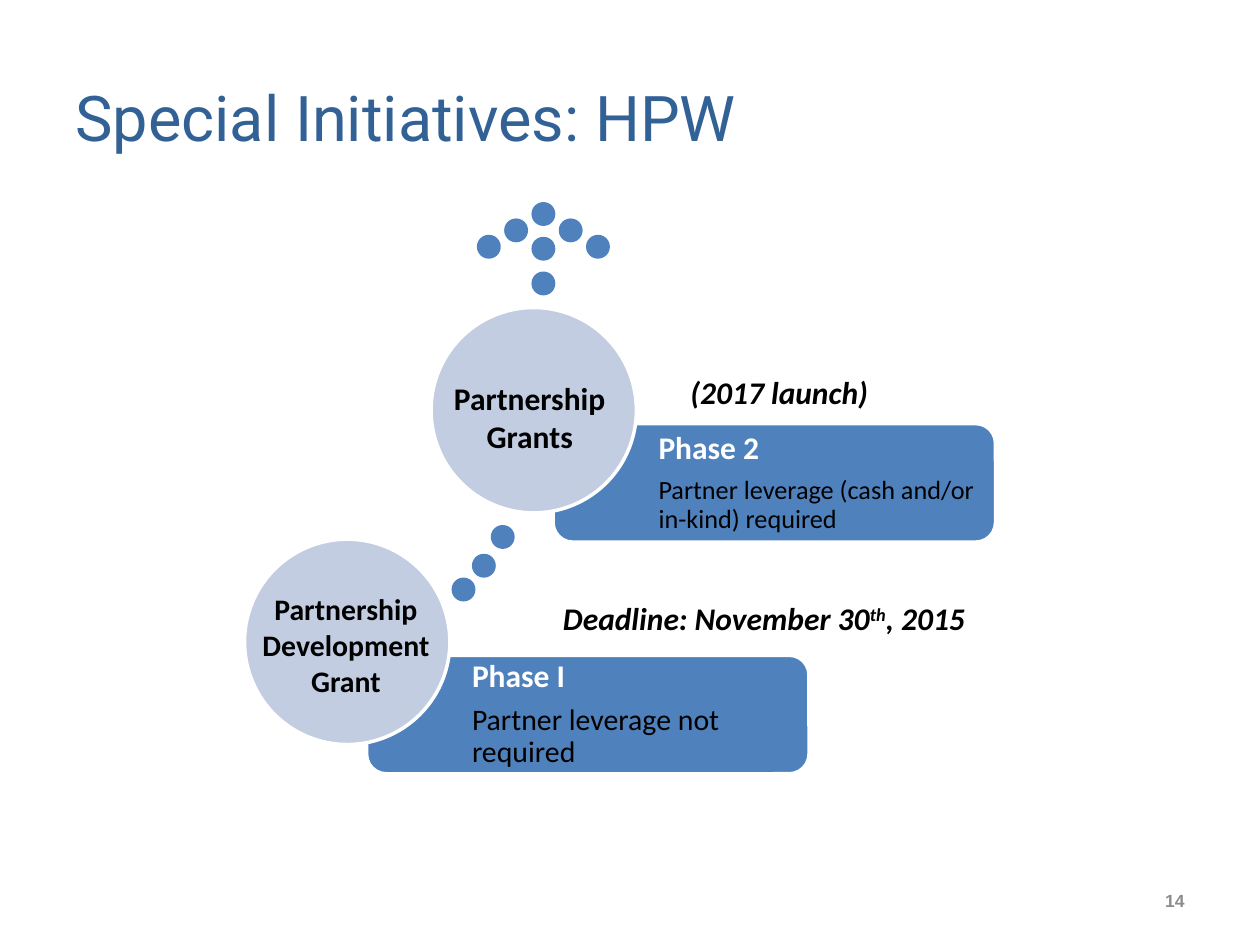
from pptx import Presentation
from pptx.dml.color import RGBColor
from pptx.enum.shapes import MSO_SHAPE as Shape
from pptx.enum.text import MSO_ANCHOR as Anchor, MSO_AUTO_SIZE as AutoSize, PP_ALIGN as Align
from pptx.util import Cm, Pt

BLUE, PALE, WHITE, BLACK = "4F81BD", "C2CDE1", "FFFFFF", "000000"
DOT, CIRCLE = 0.41, 4.14
BAR_WIDTH, BAR_HEIGHT = 8.92, 2.39


def color(hex_code):
    return RGBColor.from_string(hex_code)


def add_run(paragraph, text, size, hex_code, font="Calibri", bold=False, italic=False):
    run = paragraph.add_run()
    run.text = text
    run.font.name = font
    run.font.size = Pt(size)
    run.font.bold = bold
    run.font.italic = italic
    run.font.color.rgb = color(hex_code)
    return run


def add_filled(slide, kind, left, top, width, height, fill, line):
    shape = slide.shapes.add_shape(kind, Cm(left), Cm(top), Cm(width), Cm(height))
    shape.shadow.inherit = False
    shape.fill.solid()
    shape.fill.fore_color.rgb = color(fill)
    shape.line.color.rgb = color(line)
    shape.line.width = Pt(2)
    return shape


def add_dot(slide, left, top):
    add_filled(slide, Shape.OVAL, left, top, DOT, DOT, BLUE, BLUE)


def add_dotted_arrow(slide, left=10.75, top=4.11):
    """Draw the arrowhead around its tip, then the stem below it."""
    for step in range(-2, 3):
        add_dot(slide, left + 0.55 * step, top + 0.33 * abs(step))
    for step in (1, 2):
        add_dot(slide, left, top + 0.7 * step)


def add_phase(slide, left, top, heading, detail, detail_size):
    """Draw a phase bar with the circle that overlaps its left end."""
    bar = add_filled(slide, Shape.ROUNDED_RECTANGLE, left + 2.46, top + 2.34,
                     BAR_WIDTH, BAR_HEIGHT, BLUE, WHITE)
    frame = bar.text_frame
    frame.word_wrap = True
    frame.vertical_anchor = Anchor.MIDDLE
    frame.margin_left = Cm(2.01)
    frame.margin_right = frame.margin_top = frame.margin_bottom = Cm(0.3)
    paragraphs = frame.paragraphs[0], frame.add_paragraph()
    for paragraph in paragraphs:
        paragraph.alignment = Align.LEFT
        paragraph.line_spacing = 0.9
        paragraph.space_after = Pt(6.3)
    add_run(paragraphs[0], heading, 18, WHITE, bold=True)
    add_run(paragraphs[1], detail, detail_size, BLACK)
    add_filled(slide, Shape.OVAL, left, top, CIRCLE, CIRCLE, PALE, WHITE)


def add_text_frame(slide, left, top, width, height, wrap=True):
    frame = slide.shapes.add_textbox(Cm(left), Cm(top), Cm(width), Cm(height)).text_frame
    frame.word_wrap = wrap
    return frame


def add_circle_label(slide, left, top, width, height, lines, size, wrap=True):
    frame = add_text_frame(slide, left, top, width, height, wrap)
    frame.auto_size = AutoSize.SHAPE_TO_FIT_TEXT
    for index, line in enumerate(lines):
        paragraph = frame.add_paragraph() if index else frame.paragraphs[0]
        paragraph.alignment = Align.CENTER
        add_run(paragraph, line, size, BLACK, bold=True)


def add_date_note(slide, left, top, width, parts):
    """Add an italic note; parts are (text, is_superscript) pairs."""
    frame = add_text_frame(slide, left, top, width, 1.03)
    frame.auto_size = AutoSize.SHAPE_TO_FIT_TEXT
    for text, is_superscript in parts:
        run = add_run(frame.paragraphs[0], text, 18, BLACK, bold=True, italic=True)
        if is_superscript:
            run.font._element.set("baseline", "30000")


def add_title(slide, text):
    title = slide.shapes.title
    title.left, title.top, title.width, title.height = Cm(1.27), Cm(0.76), Cm(22.86), Cm(3.18)
    title.text_frame.vertical_anchor = Anchor.MIDDLE
    paragraph = title.text_frame.paragraphs[0]
    paragraph.alignment = Align.LEFT
    add_run(paragraph, text, 36, "326195", font="Roboto")


def add_page_number(slide, number):
    frame = add_text_frame(slide, 22.3, 17.65, 1.83, 1.02)
    frame.vertical_anchor = Anchor.MIDDLE
    frame.paragraphs[0].alignment = Align.RIGHT
    add_run(frame.paragraphs[0], number, 10, "8C8C8C", font="Arial", bold=True)


def main():
    presentation = Presentation()
    presentation.slide_width, presentation.slide_height = Cm(25.4), Cm(19.05)
    slide = presentation.slides.add_slide(presentation.slide_layouts[5])

    add_title(slide, "Special Initiatives: HPW")
    add_page_number(slide, "14")

    for left, top in ((9.93, 10.62), (9.55, 11.2), (9.14, 11.68)):
        add_dot(slide, left, top)
    add_dotted_arrow(slide)

    add_phase(slide, 4.93, 10.87, "Phase I", "Partner leverage not required", 17)
    add_phase(slide, 8.69, 6.2, "Phase 2",
              "Partner leverage (cash and/or in-kind) required", 15)

    add_circle_label(slide, 8.89, 7.52, 3.58, 1.8, ["Partnership", "Grants"], 18, wrap=False)
    add_circle_label(slide, 5.03, 11.79, 3.89, 2.44, ["Partnership Development Grant"], 17)

    add_date_note(slide, 11.1, 11.96, 9.6,
                  [("Deadline: November 30", False), ("th", True), (", 2015", False)])
    add_date_note(slide, 13.67, 7.39, 4.88, [("(2017 launch)", False)])

    presentation.save("out.pptx")


if __name__ == "__main__":
    main()
